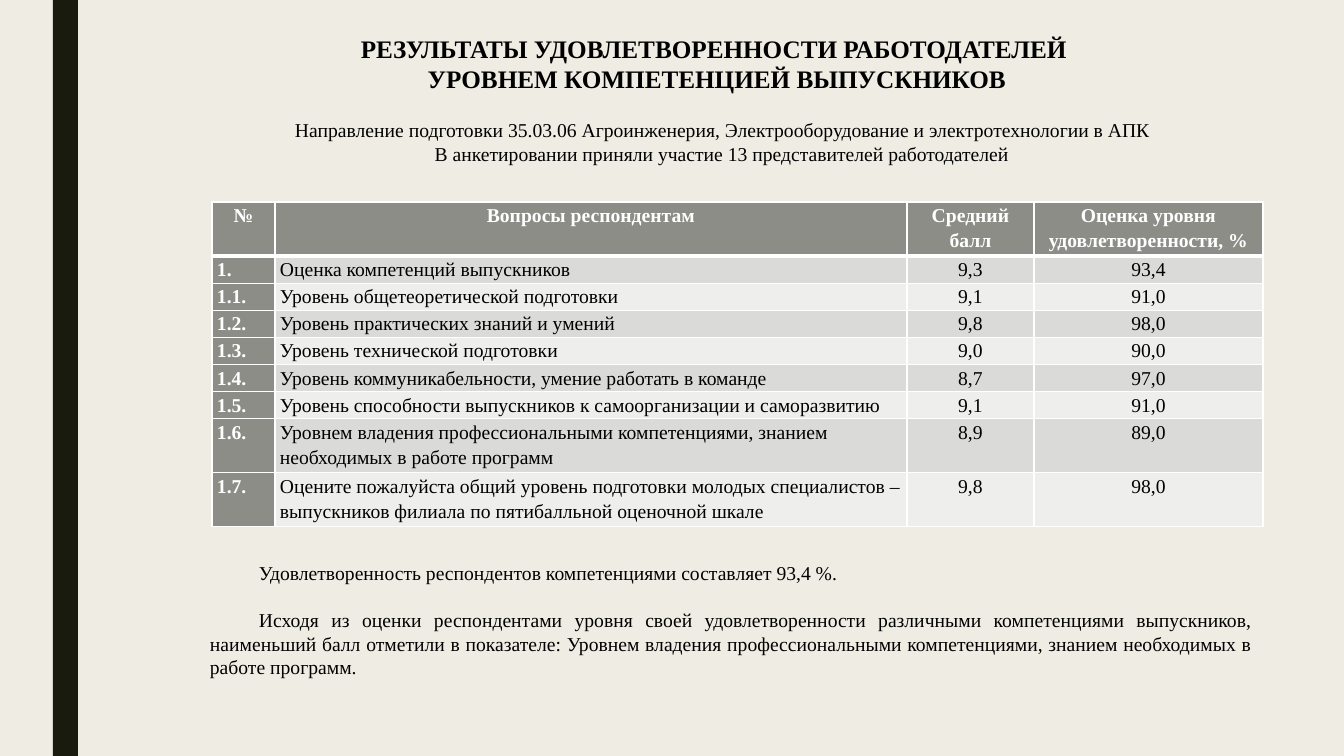
from dataclasses import dataclass

from lxml import etree
from pptx import Presentation
from pptx import util as u
from pptx.dml.color import RGBColor
from pptx.enum import shapes, text
from pptx.oxml.ns import qn

PX = 914400 / 100.8
ALIGN = text.PP_ALIGN


@dataclass(frozen=True)
class Theme:
    """Colours and type sizes of the slide."""

    font: str = "Times New Roman"
    title: int = 18
    body: int = 14
    ink: str = "000000"
    white: str = "FFFFFF"
    paper: str = "EFEDE3"
    bar: str = "191B0E"
    header: str = "8C8D86"
    bands: tuple = ("DADBD9", "EEEEED")


THEME = Theme()
TITLE = ["РЕЗУЛЬТАТЫ УДОВЛЕТВОРЕННОСТИ РАБОТОДАТЕЛЕЙ ", "УРОВНЕМ КОМПЕТЕНЦИЕЙ ВЫПУСКНИКОВ"]
SURVEY = [
    "\tНаправление подготовки 35.03.06 Агроинженерия, Электрооборудование и электротехнологии в АПК",
    "В анкетировании приняли участие 13 представителей работодателей",
]
CONCLUSIONS = [
    "Удовлетворенность респондентов компетенциями составляет 93,4 %.",
    "Исходя из оценки респондентами уровня своей удовлетворенности различными компетенциями "
    "выпускников, наименьший балл отметили в показателе: Уровнем владения профессиональными "
    "компетенциями, знанием необходимых в работе программ.",
]
RATINGS = [
    ("№", "Вопросы респондентам", "Средний балл", "Оценка уровня удовлетворенности, %"),
    ("1.", "Оценка компетенций выпускников", "9,3", "93,4"),
    ("1.1.", "Уровень общетеоретической подготовки", "9,1", "91,0"),
    ("1.2.", "Уровень практических знаний и умений", "9,8", "98,0"),
    ("1.3.", "Уровень технической подготовки", "9,0", "90,0"),
    ("1.4.", "Уровень коммуникабельности, умение работать в команде", "8,7", "97,0"),
    ("1.5.", "Уровень способности выпускников к самоорганизации и саморазвитию", "9,1", "91,0"),
    ("1.6.", "Уровнем владения профессиональными компетенциями, знанием необходимых "
     "в работе программ", "8,9", "89,0"),
    ("1.7.", "Оцените пожалуйста общий уровень подготовки молодых специалистов – "
     "выпускников филиала по пятибалльной оценочной шкале", "9,8", "98,0"),
]
COLUMN_WIDTHS = [63, 632, 127, 229]
ROW_HEIGHTS = [54] + [27] * 6 + [54] * 2


def px(length):
    """Turn pixels into EMU."""
    return u.Emu(round(length * PX))


def rgb(colour):
    """Turn a hex string into a colour."""
    return RGBColor.from_string(colour)


def write(frame, lines, size=THEME.body, colour=THEME.ink, bold=False,
          align=ALIGN.CENTER, indent=0, gap=0, spacing=1.0):
    """Write each line as a formatted paragraph of the frame."""
    for index, line in enumerate(lines):
        paragraph = frame.add_paragraph() if index else frame.paragraphs[0]
        paragraph.alignment = align
        paragraph.line_spacing = spacing
        paragraph.space_before = u.Pt(gap if index else 0)
        if indent:
            properties = paragraph._p.get_or_add_pPr()
            properties.set("marL", "0")
            properties.set("indent", str(px(indent)))
        run = paragraph.add_run()
        run.text = line
        run.font.name = THEME.font
        run.font.size = u.Pt(size)
        run.font.bold = bold
        run.font.color.rgb = rgb(colour)


def add_title(slide, box, lines):
    """Move the title placeholder and fill it."""
    heading = slide.shapes.title
    heading.left, heading.top, heading.width, heading.height = map(px, box)
    heading.text_frame.vertical_anchor = text.MSO_ANCHOR.TOP
    heading.text_frame.auto_size = text.MSO_AUTO_SIZE.SHAPE_TO_FIT_TEXT
    write(heading.text_frame, lines, size=THEME.title, bold=True)


def add_text(slide, box, lines, anchor=text.MSO_ANCHOR.TOP, **style):
    """Add a wrapping text box."""
    frame = slide.shapes.add_textbox(*map(px, box)).text_frame
    frame.word_wrap = True
    frame.auto_size = text.MSO_AUTO_SIZE.SHAPE_TO_FIT_TEXT
    frame.vertical_anchor = anchor
    write(frame, lines, **style)


def add_bar(slide, box):
    """Add the dark bar along the left side."""
    bar = slide.shapes.add_shape(shapes.MSO_SHAPE.RECTANGLE, *map(px, box))
    bar.shadow.inherit = False
    bar.fill.solid()
    bar.fill.fore_color.rgb = rgb(THEME.bar)
    bar.line.fill.background()


def set_borders(cell, **widths):
    """Draw white cell borders, given in points by side."""
    properties = cell._tc.get_or_add_tcPr()
    for side in "LRTB":
        line = etree.SubElement(properties, qn(f"a:ln{side}"), w=str(u.Pt(widths.get(side, 1))))
        fill = etree.SubElement(line, qn("a:solidFill"))
        etree.SubElement(fill, qn("a:srgbClr"), val=THEME.white)


def format_cell(cell, row, column, content):
    """Fill one cell by its place in the table."""
    heading = row == 0 or column == 0
    set_borders(cell, T=3 if row == 1 else 1, B=3 if row == 0 else 1)
    cell.fill.solid()
    cell.fill.fore_color.rgb = rgb(THEME.header if heading else THEME.bands[(row - 1) % 2])
    cell.margin_left = cell.margin_right = px(5)
    cell.margin_top = cell.margin_bottom = 0
    write(cell.text_frame, [content], bold=heading, spacing=1.15,
          colour=THEME.white if heading else THEME.ink,
          align=ALIGN.LEFT if row and column < 2 else ALIGN.CENTER)


def add_ratings(slide, left, top):
    """Add the table of ratings."""
    box = (left, top, sum(COLUMN_WIDTHS), sum(ROW_HEIGHTS))
    ratings = slide.shapes.add_table(len(RATINGS), len(COLUMN_WIDTHS), *map(px, box)).table
    ratings.first_col = True
    for column, width in zip(ratings.columns, COLUMN_WIDTHS):
        column.width = px(width)
    for row, height in zip(ratings.rows, ROW_HEIGHTS):
        row.height = px(height)
    for row, contents in enumerate(RATINGS):
        for column, content in enumerate(contents):
            format_cell(ratings.cell(row, column), row, column, content)


def main():
    """Build and save the slide."""
    deck = Presentation()
    deck.slide_width, deck.slide_height = px(1344), px(756)
    slide = deck.slides.add_slide(deck.slide_layouts[5])
    slide.background.fill.solid()
    slide.background.fill.fore_color.rgb = rgb(THEME.paper)
    add_bar(slide, (53, 0, 25, 756))
    add_title(slide, (14, 28, 1406, 72), TITLE)
    add_text(slide, (150, 113, 1095, 57), SURVEY, anchor=text.MSO_ANCHOR.MIDDLE, indent=49)
    add_text(slide, (200, 556, 1062, 129), CONCLUSIONS, align=ALIGN.JUSTIFY, indent=49, gap=17)
    add_ratings(slide, 212, 202)
    deck.save("out.pptx")


if __name__ == "__main__":
    main()
